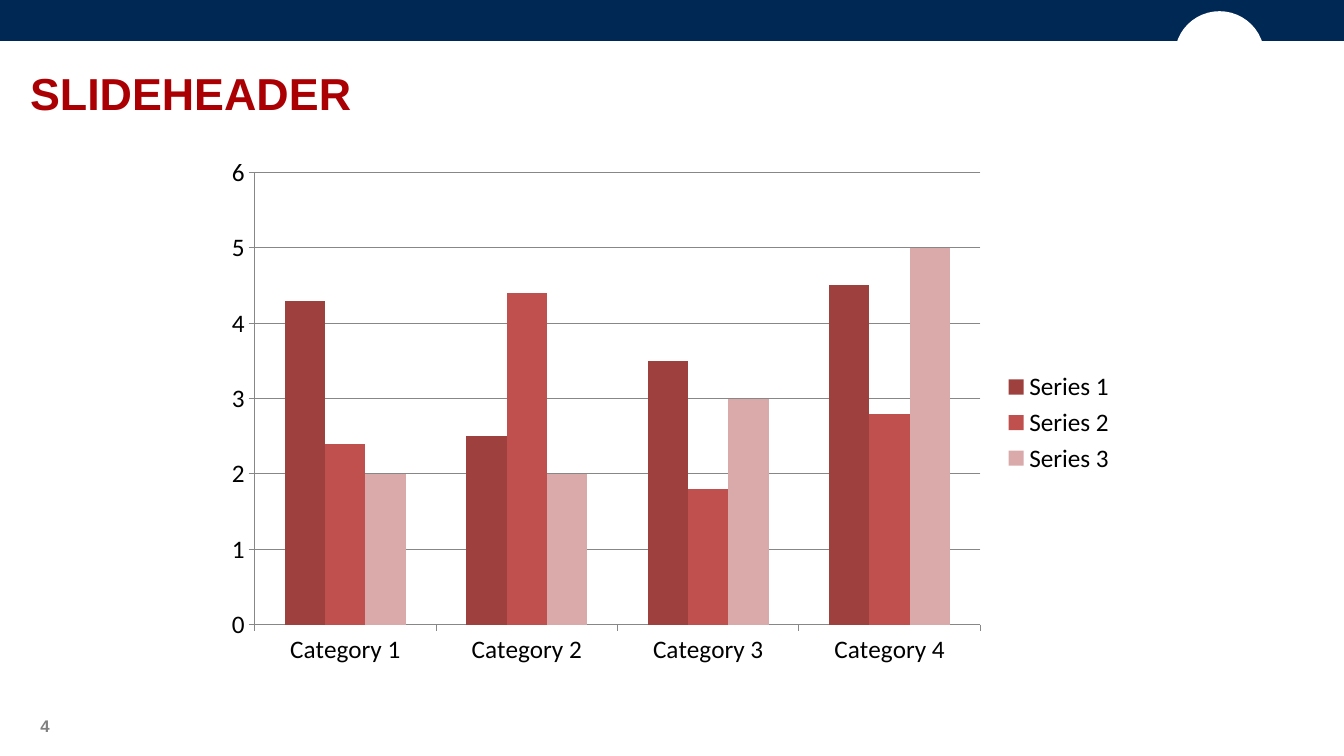
from lxml import etree
from pptx import Presentation
from pptx.chart.data import CategoryChartData
from pptx.dml.color import RGBColor
from pptx.enum.chart import XL_CHART_TYPE as ChartType
from pptx.enum.chart import XL_LEGEND_POSITION as LegendPosition
from pptx.enum.chart import XL_TICK_MARK as TickMark
from pptx.enum.shapes import MSO_SHAPE as Shape
from pptx.enum.text import MSO_ANCHOR as Anchor
from pptx.enum.text import PP_ALIGN as Align
from pptx.oxml.ns import qn
from pptx.util import Pt

EMU_PER_PX = 9525
TITLE_ONLY = 5

NAVY = RGBColor(0x00, 0x28, 0x55)
WHITE = RGBColor(0xFF, 0xFF, 0xFF)
BLACK = RGBColor(0x00, 0x00, 0x00)
RED = RGBColor(0xAB, 0x00, 0x03)
GRAY = RGBColor(0x80, 0x80, 0x80)
AXIS_GRAY = RGBColor(0x87, 0x87, 0x87)

CATEGORIES = ["Category 1", "Category 2", "Category 3", "Category 4"]
SERIES = [
    ("Series 1", (4.3, 2.5, 3.5, 4.5), RGBColor(0x9E, 0x41, 0x3E)),
    ("Series 2", (2.4, 4.4, 1.8, 2.8), RGBColor(0xC0, 0x50, 0x4D)),
    ("Series 3", (2, 2, 3, 5), RGBColor(0xD9, 0xAA, 0xA9)),
]
PLOT_AREA = {"x": 0.04, "y": 0.03, "w": 0.8, "h": 0.85}


def px(*lengths):
    return [length * EMU_PER_PX for length in lengths]


def add_filled_shape(slide, kind, box, color):
    shape = slide.shapes.add_shape(kind, *px(*box))
    shape.shadow.inherit = False
    shape.fill.solid()
    shape.fill.fore_color.rgb = color
    shape.line.color.rgb = color
    shape.line.width = Pt(2)


def write_text(shape, text, *, size, color, align):
    frame = shape.text_frame
    frame.word_wrap = True
    frame.vertical_anchor = Anchor.MIDDLE
    paragraph = frame.paragraphs[0]
    paragraph.alignment = align
    run = paragraph.add_run()
    run.text = text
    run.font.name = "Arial"
    run.font.size = Pt(size)
    run.font.bold = True
    run.font.color.rgb = color


def set_title(slide, text, box):
    title = slide.shapes.title
    title.left, title.top, title.width, title.height = px(*box)
    write_text(title, text, size=32, color=RED, align=Align.LEFT)


def place_plot_area(chart, fractions):
    """Fix the inner plot area as fractions of the chart frame."""
    plot_area = chart.element.find(".//" + qn("c:plotArea"))
    for old_layout in plot_area.findall(qn("c:layout")):
        plot_area.remove(old_layout)
    layout = etree.Element(qn("c:layout"))
    manual = etree.SubElement(layout, qn("c:manualLayout"))
    settings = {"layoutTarget": "inner", "xMode": "edge", "yMode": "edge", **fractions}
    for name, value in settings.items():
        etree.SubElement(manual, qn(f"c:{name}")).set("val", str(value))
    plot_area.insert(0, layout)


def format_axis(axis):
    axis.major_tick_mark = TickMark.OUTSIDE
    axis.minor_tick_mark = TickMark.NONE
    axis.format.line.color.rgb = AXIS_GRAY
    axis.format.line.width = Pt(0.75)


def add_column_chart(slide, box):
    data = CategoryChartData()
    data.categories = CATEGORIES
    for name, values, _ in SERIES:
        data.add_series(name, values)
    chart = slide.shapes.add_chart(ChartType.COLUMN_CLUSTERED, *px(*box), data).chart
    chart.has_title = False
    chart.font.name = "Calibri"
    chart.font.size = Pt(18)
    chart.font.color.rgb = BLACK

    plot = chart.plots[0]
    plot.vary_by_categories = False
    plot.gap_width = 150
    plot.overlap = 0
    for series, (_, _, color) in zip(plot.series, SERIES):
        series.format.fill.solid()
        series.format.fill.fore_color.rgb = color

    format_axis(chart.category_axis)
    value_axis = chart.value_axis
    format_axis(value_axis)
    value_axis.minimum_scale, value_axis.maximum_scale = 0, 6
    value_axis.major_unit = 1
    value_axis.has_major_gridlines = True
    value_axis.major_gridlines.format.line.color.rgb = AXIS_GRAY
    value_axis.major_gridlines.format.line.width = Pt(0.75)

    chart.has_legend = True
    chart.legend.position = LegendPosition.RIGHT
    chart.legend.include_in_layout = False
    place_plot_area(chart, PLOT_AREA)


def add_page_number(slide, number, box):
    text_box = slide.shapes.add_textbox(*px(*box))
    write_text(text_box, number, size=12, color=GRAY, align=Align.CENTER)


def main():
    presentation = Presentation()
    presentation.slide_width, presentation.slide_height = px(1280, 720)
    slide = presentation.slides.add_slide(presentation.slide_layouts[TITLE_ONLY])
    add_filled_shape(slide, Shape.RECTANGLE, (0, 0, 1280, 38), NAVY)
    add_filled_shape(slide, Shape.OVAL, (1120, 12, 83, 83), WHITE)
    set_title(slide, "SLIDEHEADER", (19, 27, 1004, 122))
    add_column_chart(slide, (208, 149, 864, 507))
    add_page_number(slide, "4", (19, 672, 48, 38))
    presentation.save("out.pptx")


if __name__ == "__main__":
    main()
